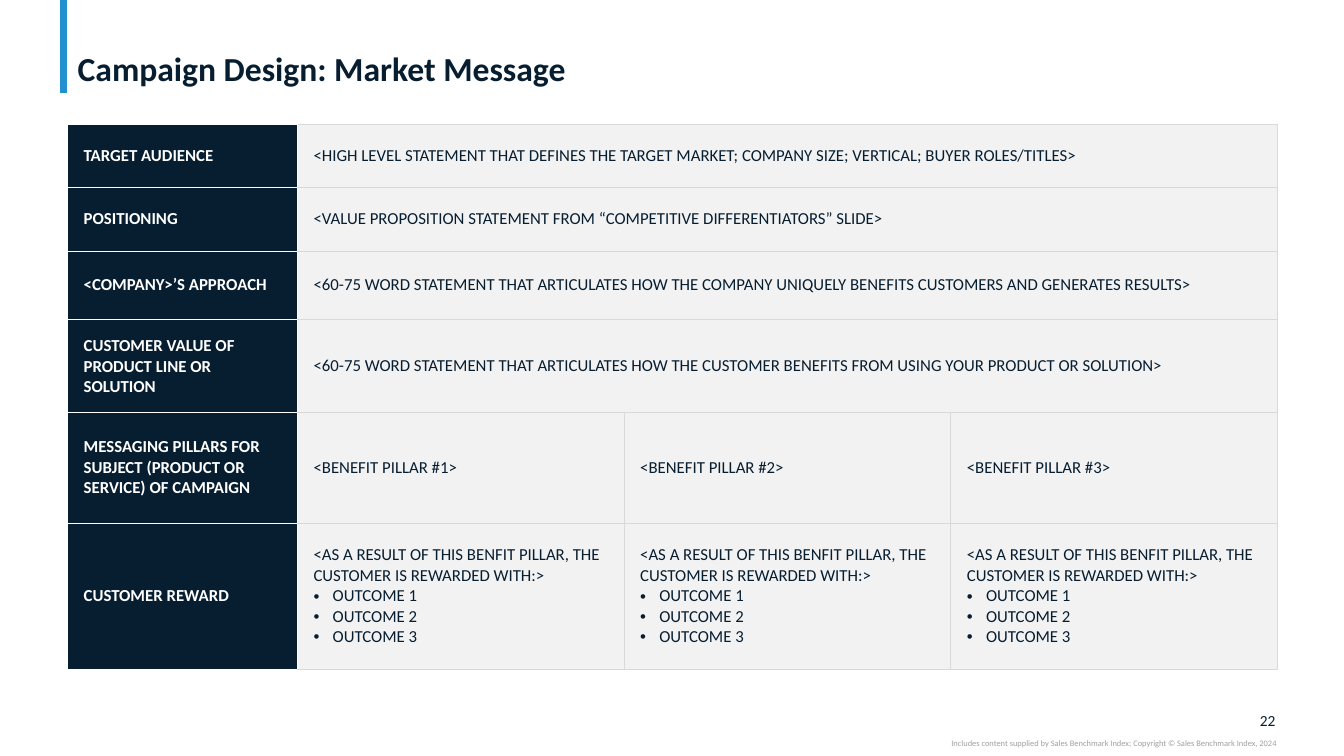
from lxml import etree
from pptx import Presentation
from pptx.dml.color import RGBColor
from pptx.enum import shapes, text
from pptx.oxml import ns
from pptx.util import Inches, Pt

FONT = "Calibri"
COLORS = {"navy": "071E31", "blue": "2391CF", "panel": "F2F2F2",
          "rule": "D9D9D9", "white": "FFFFFF", "grey": "A0A0A0"}
COLUMNS = [2.28, 3.24, 3.24, 3.24]
REWARD = ["<AS A RESULT OF THIS BENFIT PILLAR, THE CUSTOMER IS REWARDED WITH:>",
          "OUTCOME 1", "OUTCOME 2", "OUTCOME 3"]
# Height, label, then one list of paragraphs per content cell
ROWS = [
    (0.63, "TARGET AUDIENCE",
     [["<HIGH LEVEL STATEMENT THAT DEFINES THE TARGET MARKET; COMPANY SIZE; "
       "VERTICAL; BUYER ROLES/TITLES>"]]),
    (0.63, "POSITIONING",
     [["<VALUE PROPOSITION STATEMENT FROM “COMPETITIVE DIFFERENTIATORS” SLIDE>"]]),
    (0.68, "<COMPANY>’S APPROACH",
     [["<60-75 WORD STATEMENT THAT ARTICULATES HOW THE COMPANY UNIQUELY "
       "BENEFITS CUSTOMERS AND GENERATES RESULTS>"]]),
    (0.92, "CUSTOMER VALUE OF PRODUCT LINE OR SOLUTION",
     [["<60-75 WORD STATEMENT THAT ARTICULATES HOW THE CUSTOMER BENEFITS FROM "
       "USING YOUR PRODUCT OR SOLUTION>"]]),
    (1.1, "MESSAGING PILLARS FOR SUBJECT (PRODUCT OR SERVICE) OF CAMPAIGN",
     [[f"<BENEFIT PILLAR #{n}>"] for n in (1, 2, 3)]),
    (1.45, "CUSTOMER REWARD", [REWARD] * 3),
]


def rgb(name):
    return RGBColor.from_string(COLORS[name])


def add_run(p, words, size, color, bold=False):
    r = p.add_run()
    r.text = words
    r.font.name, r.font.size, r.font.bold = FONT, Pt(size), bold
    r.font.color.rgb = rgb(color)


def add_color(parent, color):
    etree.SubElement(parent, ns.qn("a:srgbClr"), val=COLORS[color])


def set_bullet(p):
    pPr = p._p.get_or_add_pPr()
    pPr.set("marL", str(Inches(0.19)))
    pPr.set("indent", str(Inches(-0.19)))
    add_color(etree.SubElement(pPr, ns.qn("a:buClr")), "navy")
    etree.SubElement(pPr, ns.qn("a:buFont"), typeface="Arial")
    etree.SubElement(pPr, ns.qn("a:buChar"), char="•")


def set_borders(cell, left, others):
    tcPr = cell._tc.get_or_add_tcPr()
    for i, side in enumerate("LRTB"):
        ln = etree.Element(ns.qn(f"a:ln{side}"), w=str(Pt(0.5)))
        fill = etree.SubElement(ln, ns.qn("a:solidFill"))
        add_color(fill, left if side == "L" else others)
        tcPr.insert(i, ln)


def fill_cell(cell, paragraphs, fill, color, bold=False):
    """Write the first paragraph plain and the rest as bullets."""
    cell.fill.solid()
    cell.fill.fore_color.rgb = rgb(fill)
    cell.vertical_anchor = text.MSO_ANCHOR.MIDDLE
    cell.margin_left = cell.margin_right = Inches(0.16)
    cell.margin_top = cell.margin_bottom = Inches(0.16)
    tf = cell.text_frame
    for i, words in enumerate(paragraphs):
        p = tf.add_paragraph() if i else tf.paragraphs[0]
        if i:
            set_bullet(p)
        add_run(p, words, 12, color, bold)


def add_message_table(s):
    frame = s.shapes.add_table(len(ROWS), len(COLUMNS), Inches(0.67), Inches(1.23),
                               Inches(sum(COLUMNS)), Inches(sum(r[0] for r in ROWS)))
    table = frame.table
    table.first_row = table.horz_banding = False
    for column, width in zip(table.columns, COLUMNS):
        column.width = Inches(width)
    for i, (height, label, contents) in enumerate(ROWS):
        table.rows[i].height = Inches(height)
        fill_cell(table.cell(i, 0), [label], "navy", "white", bold=True)
        set_borders(table.cell(i, 0), "white", "white")
        if len(contents) == 1:
            table.cell(i, 1).merge(table.cell(i, 3))
        for j, paragraphs in enumerate(contents, 1):
            fill_cell(table.cell(i, j), paragraphs, "panel", "navy")
        for j in (1, 2, 3):
            set_borders(table.cell(i, j), "white" if j == 1 else "rule", "rule")


def set_title(s, words):
    sp = s.shapes.title
    sp.left, sp.top = Inches(0.67), Inches(0.04)
    sp.width, sp.height = Inches(11.99), Inches(0.84)
    tf = sp.text_frame
    tf.auto_size = text.MSO_AUTO_SIZE.NONE
    tf.vertical_anchor = text.MSO_ANCHOR.BOTTOM
    tf.margin_left = tf.margin_right = Inches(0.1)
    tf.margin_top = tf.margin_bottom = 0
    p = tf.paragraphs[0]
    p.alignment, p.line_spacing = text.PP_ALIGN.LEFT, 0.9
    add_run(p, words, 24, "navy", bold=True)


def add_accent_line(s):
    line = s.shapes.add_connector(shapes.MSO_CONNECTOR.STRAIGHT, Inches(0.63), 0,
                                  Inches(0.63), Inches(0.92))
    line.line.color.rgb = rgb("blue")
    line.line.width = Pt(5)
    etree.SubElement(line._element.spPr, ns.qn("a:effectLst"))


def add_footer(s, words, left, top, width, height, size, color, anchor):
    sp = s.shapes.add_textbox(Inches(left), Inches(top), Inches(width), Inches(height))
    tf = sp.text_frame
    tf.word_wrap = True
    tf.vertical_anchor = anchor
    tf.margin_left = tf.margin_right = tf.margin_top = tf.margin_bottom = 0
    p = tf.paragraphs[0]
    p.alignment = text.PP_ALIGN.RIGHT
    add_run(p, words, size, color)


def main():
    prs = Presentation()
    prs.slide_width, prs.slide_height = Inches(13.33), Inches(7.5)
    s = prs.slides.add_slide(prs.slide_layouts[5])
    add_accent_line(s)
    add_footer(s, "22", 12.32, 7.05, 0.33, 0.19, 11, "navy", text.MSO_ANCHOR.MIDDLE)
    add_footer(s, "Includes content supplied by Sales Benchmark Index; "
               "Copyright © Sales Benchmark Index, 2024",
               7.5, 7.32, 5.16, 0.1, 6, "grey", text.MSO_ANCHOR.TOP)
    set_title(s, "Campaign Design: Market Message")
    add_message_table(s)
    prs.save("out.pptx")


if __name__ == "__main__":
    main()
